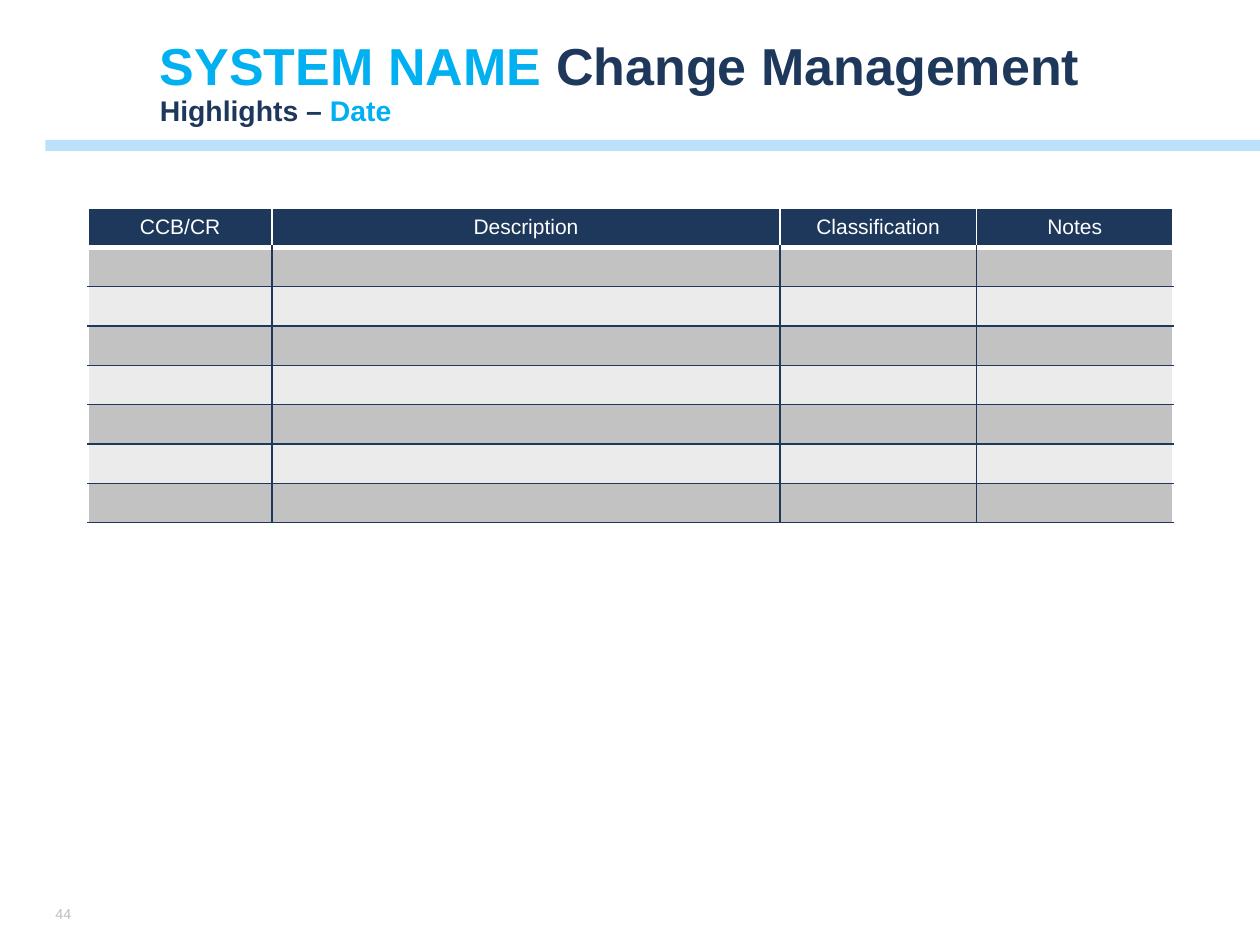
from lxml import etree
from pptx import Presentation, util as u
from pptx.dml import color
from pptx.enum import shapes, text
from pptx.oxml import ns

NAVY, CYAN, WHITE = "1D385B", "00B0F0", "FFFFFF"


def paint(target, value):
    if hasattr(target, "solid"):
        target.solid()
        target = target.fore_color
    else:
        target = target.color
    target.rgb = color.RGBColor.from_string(value)


def add_span(para, words, size, value, bold=False):
    span = para.add_run()
    span.text = words
    span.font.name = "Arial"
    span.font.size = u.Pt(size)
    span.font.bold = bold
    paint(span.font, value)


deck = Presentation()
deck.slide_width, deck.slide_height = u.Inches(10), u.Inches(7.5)
page = deck.slides.add_slide(deck.slide_layouts[6])

band = page.shapes.add_shape(
    shapes.MSO_SHAPE.RECTANGLE,
    u.Inches(0.36), u.Inches(1.11), u.Inches(9.64), u.Inches(0.09))
band.shadow.inherit = False
band.line.fill.background()
paint(band.fill, "65BAF5")
band_color = band.fill._xPr.find(".//" + ns.qn("a:srgbClr"))
etree.SubElement(band_color, ns.qn("a:alpha"), val="43000")

number_box = page.shapes.add_textbox(
    u.Inches(0.37), u.Inches(7.12), u.Inches(0.32), u.Inches(0.26))
number_frame = number_box.text_frame
number_frame.word_wrap = True
number_frame.vertical_anchor = text.MSO_ANCHOR.MIDDLE
number_frame.margin_left = number_frame.margin_right = u.Inches(0.07)
number_frame.margin_top = number_frame.margin_bottom = u.Inches(0.04)
add_span(number_frame.paragraphs[0], "44", 8.2, "BFBFBF")

title_box = page.shapes.add_textbox(
    u.Inches(1.17), u.Inches(0.33), u.Inches(8.61), u.Inches(0.67))
title_frame = title_box.text_frame
title_frame.word_wrap = True
title_frame.vertical_anchor = text.MSO_ANCHOR.MIDDLE
title = title_frame.paragraphs[0]
title.line_spacing = 0.9
add_span(title, "SYSTEM NAME ", 29.7, CYAN, True)
add_span(title, "Change Management ", 29.7, NAVY, True)
title.add_line_break()
add_span(title, "Highlights – ", 16.2, NAVY, True)
add_span(title, "Date", 16.2, CYAN, True)

headings = ["CCB/CR", "Description", "Classification", "Notes"]
widths = [1.46, 4.03, 1.56, 1.56]
row_count, last = 8, len(headings) - 1
table = page.shapes.add_table(
    row_count, len(headings),
    u.Inches(0.7), u.Inches(1.65), u.Inches(sum(widths)), u.Inches(2.5)).table
table.first_row = table.horz_banding = False
for column, width in zip(table.columns, widths):
    column.width = u.Inches(width)

for r in range(row_count):
    for c, heading in enumerate(headings):
        cell = table.cell(r, c)
        header = r == 0
        edges = {
            "lnL": (WHITE if header or c == 0 else NAVY, 1),
            "lnR": (WHITE if header or c == last else NAVY, 1),
            "lnT": (WHITE if r < 2 else NAVY, 1),
            "lnB": (WHITE, 3) if header else (NAVY, 1),
        }
        props = cell._tc.get_or_add_tcPr()
        for edge, (value, points) in edges.items():
            line = etree.SubElement(props, ns.qn("a:" + edge), w=str(u.Pt(points)))
            fill = etree.SubElement(line, ns.qn("a:solidFill"))
            etree.SubElement(fill, ns.qn("a:srgbClr"), val=value)
        paint(cell.fill, NAVY if header else ("EBEBEB", "C2C2C2")[r % 2])
        cell.vertical_anchor = text.MSO_ANCHOR.MIDDLE
        cell.margin_top = cell.margin_bottom = u.Inches(0.04)
        para = cell.text_frame.paragraphs[0]
        if header:
            para.alignment = text.PP_ALIGN.CENTER
            add_span(para, heading, 12, WHITE)
        else:
            etree.SubElement(para._p, ns.qn("a:endParaRPr"), sz="1200")

deck.save("out.pptx")
